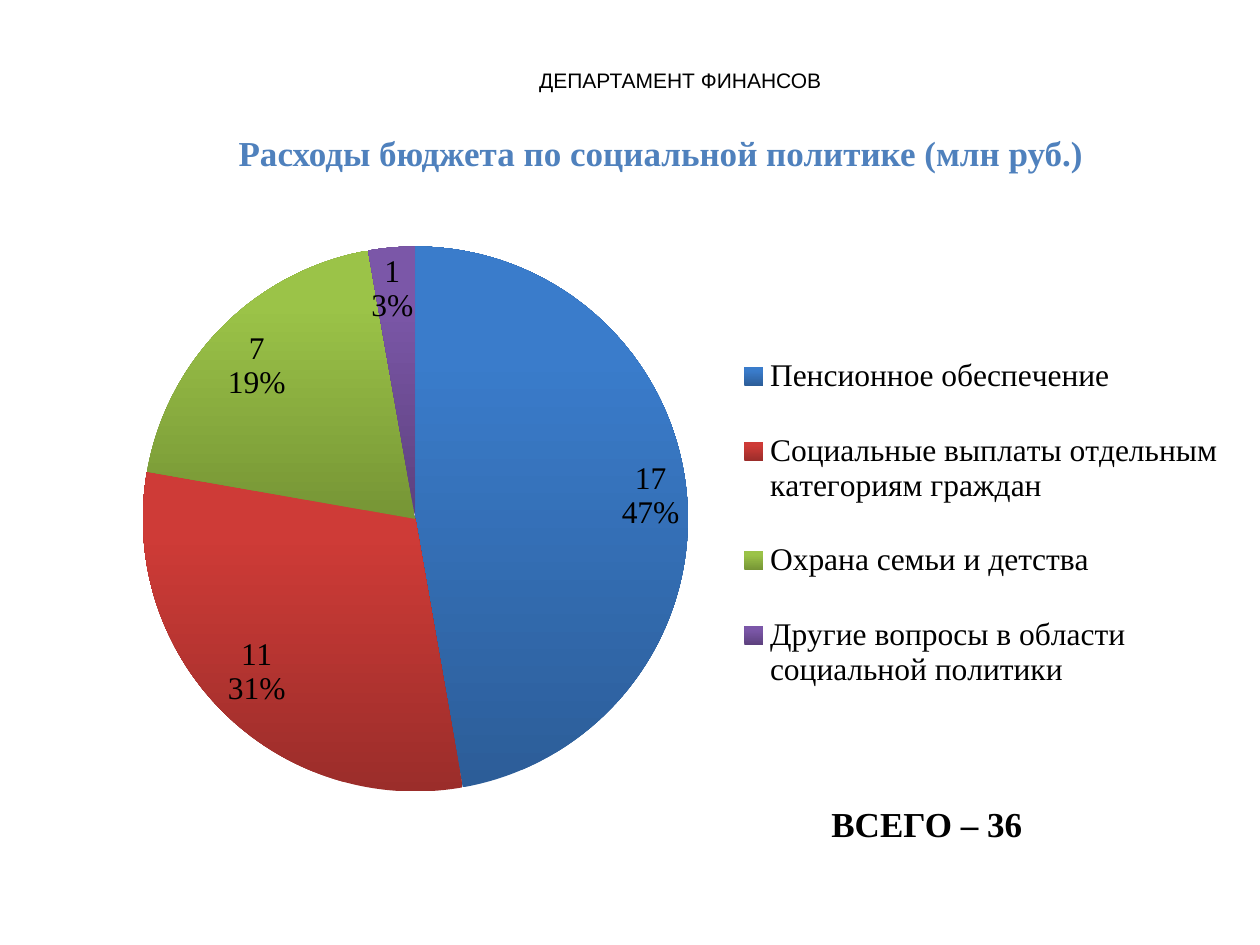
from lxml.etree import SubElement
from pptx import Presentation
from pptx.chart.data import CategoryChartData
from pptx.dml.color import RGBColor
from pptx.enum.chart import XL_CHART_TYPE, XL_LABEL_POSITION, XL_LEGEND_POSITION
from pptx.enum.text import MSO_ANCHOR, PP_ALIGN
from pptx.oxml import parse_xml
from pptx.oxml.ns import nsdecls, qn
from pptx.util import Inches, Pt

COLORS = {"text": "000000", "title": "4F81BD"}
SERIF = "Times New Roman"

# Category, value, dark and light ends of the slice gradient
SLICES = [
    ("Пенсионное обеспечение", 17, "2C5D98", "3A7CCB"),
    ("Социальные выплаты отдельным категориям граждан", 11, "9B2D2A", "CE3B37"),
    ("Охрана семьи и детства", 7, "769535", "9BC348"),
    ("Другие вопросы в области социальной политики", 1, "5D417E", "7B57A8"),
]


def style_font(font, size, name=SERIF, color="text", bold=False):
    font.size, font.name, font.bold = Pt(size), name, bold
    font.color.rgb = RGBColor.from_string(COLORS[color])


def add_text(slide, box, text, align=PP_ALIGN.CENTER, wrap=True, **font):
    tf = slide.shapes.add_textbox(*map(Inches, box)).text_frame
    tf.word_wrap = wrap
    tf.vertical_anchor = MSO_ANCHOR.MIDDLE
    p = tf.paragraphs[0]
    p.alignment = align
    r = p.add_run()
    r.text = text
    style_font(r.font, **font)


def set_layout(parent, after, box, inner=False):
    """Place a chart part by fractions of the chart's size."""
    old = parent.find(qn("c:layout"))
    if old is not None:
        parent.remove(old)
    layout = parse_xml(f"<c:layout {nsdecls('c')}/>")
    manual = SubElement(layout, qn("c:manualLayout"))
    settings = [("layoutTarget", "inner")] if inner else []
    settings += [("xMode", "edge"), ("yMode", "edge"), *zip("xywh", box)]
    for tag, value in settings:
        SubElement(manual, qn(f"c:{tag}")).set("val", str(value))
    if after is None:
        parent.insert(0, layout)
    else:
        after.addnext(layout)


def add_labels(plot):
    plot.has_data_labels = True
    labels = plot.data_labels
    labels.show_value = labels.show_percentage = True
    labels.position = XL_LABEL_POSITION.INSIDE_END
    style_font(labels.font, 18)
    separator = parse_xml(f"<c:separator {nsdecls('c')}>\n</c:separator>")
    labels._element.find(qn("c:showBubbleSize")).addnext(separator)


def add_pie(slide, box):
    data = CategoryChartData()
    data.categories = [s[0] for s in SLICES]
    data.add_series("Series 1", [s[1] for s in SLICES])
    chart = slide.shapes.add_chart(
        XL_CHART_TYPE.PIE, *map(Inches, box), data).chart
    chart.has_title = False
    style_font(chart.font, 18)

    plot = chart.plots[0]
    plot.vary_by_categories = True
    for i, (_, _, dark, light) in enumerate(SLICES):
        fill = plot.series[0].points[i].format.fill
        fill.gradient()
        fill.gradient_angle = 90
        for stop, color, pos in zip(fill.gradient_stops, (dark, light), (0, 0.8)):
            stop.color.rgb = RGBColor.from_string(color)
            stop.position = pos
    add_labels(plot)

    chart.has_legend = True
    legend = chart.legend
    legend.position = XL_LEGEND_POSITION.RIGHT
    legend.include_in_layout = False
    style_font(legend.font, 18)
    el = legend._element
    set_layout(el, el.find(qn("c:legendPos")), (0.58, 0.19, 0.41, 0.63))
    set_layout(chart._chartSpace.chart.plotArea, None,
               (0.075, 0.079, 0.462, 0.84), inner=True)


def main():
    prs = Presentation()
    prs.slide_width, prs.slide_height = Inches(10), Inches(7.5)
    slide = prs.slides.add_slide(prs.slide_layouts[6])

    # Headings
    add_text(slide, (0.91, 0.49, 8.98, 0.3), "ДЕПАРТАМЕНТ ФИНАНСОВ",
             size=12, name="Arial")
    add_text(slide, (0.29, 0.99, 9.91, 0.44),
             "Расходы бюджета по социальной политике (млн руб.)",
             size=20, color="title", bold=True)

    # Total
    add_text(slide, (6.5, 6.27, 2.13, 0.53), "ВСЕГО – 36",
             align=PP_ALIGN.LEFT, wrap=False, size=20, bold=True)

    # Spending by category
    add_pie(slide, (0.43, 1.55, 9.37, 5.15))

    prs.save("out.pptx")


if __name__ == "__main__":
    main()
